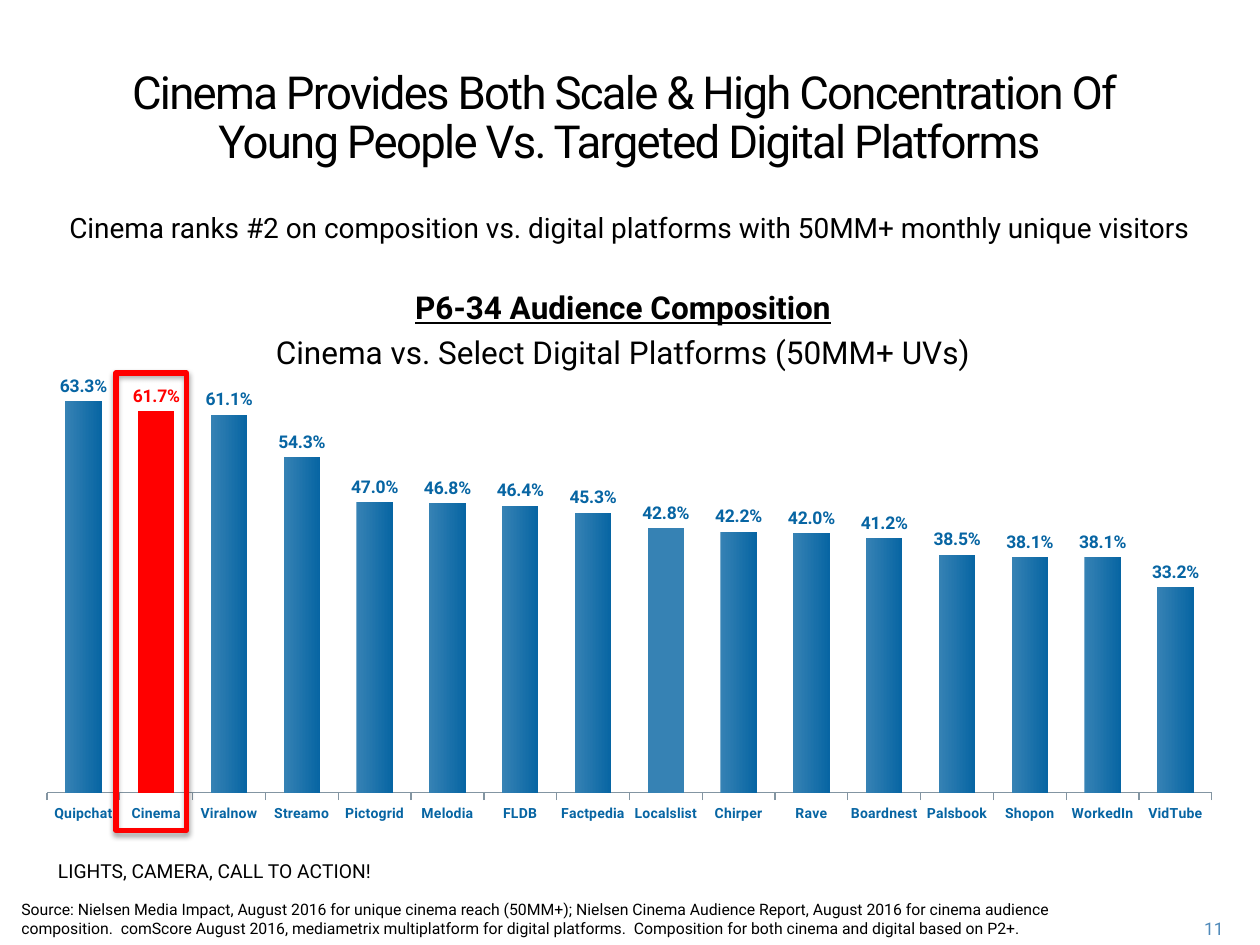
from dataclasses import dataclass

from lxml.etree import SubElement
from pptx import Presentation
from pptx.chart.data import CategoryChartData
from pptx.dml.color import RGBColor
from pptx.enum.chart import XL_CHART_TYPE, XL_LABEL_POSITION, XL_TICK_LABEL_POSITION, XL_TICK_MARK
from pptx.enum.shapes import MSO_SHAPE
from pptx.enum.text import PP_ALIGN
from pptx.oxml import parse_xml
from pptx.oxml.ns import nsdecls, qn
from pptx.util import Cm, Pt


@dataclass(frozen=True)
class Theme:
    """Colours, font and type sizes of the deck."""
    font: str = "Roboto"
    ink: RGBColor = RGBColor(0x00, 0x00, 0x00)
    blue: RGBColor = RGBColor(0x07, 0x65, 0xA3)
    light_blue: RGBColor = RGBColor(0x36, 0x82, 0xB4)
    page_blue: RGBColor = RGBColor(0x50, 0x8A, 0xBA)
    axis: RGBColor = RGBColor(0x83, 0x95, 0xA2)
    red: RGBColor = RGBColor(0xFF, 0x00, 0x00)
    title: int = 26
    heading: int = 18
    lead: int = 16
    tagline: int = 11
    small: int = 10
    source: int = 9
    category: int = 8


@dataclass(frozen=True)
class Box:
    """A rectangle in centimetres."""
    left: float
    top: float
    width: float
    height: float

    def lengths(self):
        """Return left, top, width and height as lengths."""
        return Cm(self.left), Cm(self.top), Cm(self.width), Cm(self.height)

    def inner(self, left, top, width, height):
        """Return a box placed relative to this one."""
        return Box(self.left + left, self.top + top, width, height)


THEME = Theme()
AUDIENCE = {
    "Quipchat": 0.633, "Cinema": 0.617, "Viralnow": 0.611, "Streamo": 0.543,
    "Pictogrid": 0.47, "Melodia": 0.468, "FLDB": 0.464, "Factpedia": 0.453,
    "Localslist": 0.428, "Chirper": 0.422, "Rave": 0.42, "Boardnest": 0.412,
    "Palsbook": 0.385, "Shopon": 0.381, "WorkedIn": 0.381, "VidTube": 0.332,
}


def style_font(font, size, color, bold=False):
    """Set the theme font with a size, colour and weight."""
    font.name, font.size, font.bold = THEME.font, Pt(size), bold
    font.color.rgb = color


def add_text(page, box, lines, size, color=THEME.ink, align=PP_ALIGN.LEFT):
    """Add a wrapped text box and return its paragraphs."""
    frame = page.shapes.add_textbox(*box.lengths()).text_frame
    frame.word_wrap = True
    frame.text = "\n".join(lines)
    for para in frame.paragraphs:
        para.alignment = align
        style_font(para.font, size, color)
    return frame.paragraphs


def add_header(page, box):
    """Add the title and the lead sentence below it."""
    title = "Cinema Provides Both Scale & High Concentration Of \vYoung People Vs. Targeted Digital Platforms"
    para, = add_text(page, box.inner(0, 0, box.width, 2.7), [title], THEME.title, align=PP_ALIGN.CENTER)
    para.line_spacing = Pt(28)
    for span in para.runs:
        span.font._element.set("spc", "-100")
    lead = "Cinema ranks #2 on composition vs. digital platforms with 50MM+ monthly unique visitors"
    add_text(page, box.inner(0, 2.84, box.width, 0.94), [lead], THEME.lead, align=PP_ALIGN.CENTER)


def add_chart_heading(page, box):
    """Add the two-line heading of the chart."""
    lines = ["P6-34 Audience Composition", "Cinema vs. Select Digital Platforms (50MM+ UVs)"]
    heading, subheading = add_text(page, box, lines, THEME.heading, align=PP_ALIGN.CENTER)
    heading.font.bold = heading.font.underline = True
    subheading.space_before = Pt(3.6)


def set_plot_area(chart, **fractions):
    """Fix the inner plot area as fractions of the chart."""
    plot_area = chart._chartSpace.chart.plotArea
    for old in plot_area.findall(qn("c:layout")):
        plot_area.remove(old)
    layout = parse_xml(f"<c:layout {nsdecls('c')}><c:manualLayout/></c:layout>")
    settings = {"layoutTarget": "inner", "xMode": "edge", "yMode": "edge", **fractions}
    for name, value in settings.items():
        SubElement(layout[0], qn(f"c:{name}")).set("val", str(value))
    plot_area.insert(0, layout)


def style_axes(chart):
    """Show the category axis and hide the value axis."""
    names, values = chart.category_axis, chart.value_axis
    style_font(names.tick_labels.font, THEME.category, THEME.blue, bold=True)
    names.major_tick_mark = XL_TICK_MARK.OUTSIDE
    names.tick_label_position = XL_TICK_LABEL_POSITION.LOW
    names.format.line.color.rgb = THEME.axis
    names.format.line.width = Pt(0.75)
    values.minimum_scale, values.maximum_scale = 0, 0.7
    values.has_major_gridlines = False
    values.visible = False


def style_columns(plot):
    """Colour the columns and their value labels."""
    plot.gap_width, plot.overlap = 100, -20
    plot.vary_by_categories = False
    series = plot.series[0]
    fill = series.format.fill
    fill.gradient()
    fill.gradient_angle = 0
    for stop, color in zip(fill.gradient_stops, (THEME.light_blue, THEME.blue)):
        stop.color.rgb = color
    names = list(AUDIENCE)
    for name, color in (("Cinema", THEME.red), ("Localslist", THEME.light_blue)):
        point_fill = series.points[names.index(name)].format.fill
        point_fill.solid()
        point_fill.fore_color.rgb = color
    labels = series.data_labels
    labels.show_value = True
    labels.number_format, labels.number_format_is_linked = "0.0%", False
    labels.position = XL_LABEL_POSITION.OUTSIDE_END
    style_font(labels.font, THEME.small, THEME.blue, bold=True)
    cinema = series.points[names.index("Cinema")].data_label
    style_font(cinema.font, THEME.small, THEME.red, bold=True)
    cinema.position = XL_LABEL_POSITION.OUTSIDE_END


def add_audience_chart(page, box):
    """Add the column chart with a frame around the cinema column."""
    data = CategoryChartData(number_format="0.0%")
    data.categories = list(AUDIENCE)
    data.add_series("Series 1", AUDIENCE.values())
    chart = page.shapes.add_chart(XL_CHART_TYPE.COLUMN_CLUSTERED, *box.lengths(), data).chart
    chart.has_legend = chart.has_title = False
    style_font(chart.font, THEME.heading, THEME.ink)
    set_plot_area(chart, x=0.02, y=0.02, w=0.96, h=0.9)
    style_axes(chart)
    style_columns(chart.plots[0])
    add_highlight(page, box.inner(1.88, 0.46, 1.42, 9.22))


def add_highlight(page, box):
    """Add a red outline with a soft shadow below."""
    frame = page.shapes.add_shape(MSO_SHAPE.RECTANGLE, *box.lengths())
    frame.fill.background()
    frame.line.color.rgb = THEME.red
    frame.line.width = Pt(3)
    frame.shadow.inherit = False
    effects = frame._element.spPr.find(qn("a:effectLst"))
    effects.append(parse_xml(
        f'<a:outerShdw {nsdecls("a")} blurRad="40000" dist="23000" dir="5400000" rotWithShape="0">'
        '<a:srgbClr val="000000"><a:alpha val="35000"/></a:srgbClr></a:outerShdw>'))


def add_footer(page, box):
    """Add the tagline, the source note and the page number."""
    source = ("Source: Nielsen Media Impact, August 2016 for unique cinema reach (50MM+); "
              "Nielsen Cinema Audience Report, August 2016 for cinema audience composition.  "
              "comScore August 2016, mediametrix multiplatform for digital platforms.  "
              "Composition for both cinema and digital based on P2+.")
    add_text(page, box.inner(0.74, 0, 7.82, 0.8), ["LIGHTS, CAMERA, CALL TO ACTION!"], THEME.tagline)
    add_text(page, box.inner(0, 0.81, 21.46, 0.66), [source], THEME.source)
    add_text(page, box.inner(23.19, 1.19, 1.55, 0.64), ["11"], THEME.small, THEME.page_blue, PP_ALIGN.RIGHT)


def main():
    """Build and save the slide."""
    deck = Presentation()
    deck.slide_width, deck.slide_height = Cm(25.4), Cm(19.05)
    page = deck.slides.add_slide(deck.slide_layouts[6])
    add_audience_chart(page, Box(0.46, 7.06, 24.46, 9.7))
    add_header(page, Box(0.46, 1.27, 24.46, 3.8))
    add_chart_heading(page, Box(0.33, 5.69, 24.46, 1.8))
    add_footer(page, Box(0.18, 17.2, 24.74, 1.83))
    deck.save("out.pptx")


if __name__ == "__main__":
    main()
